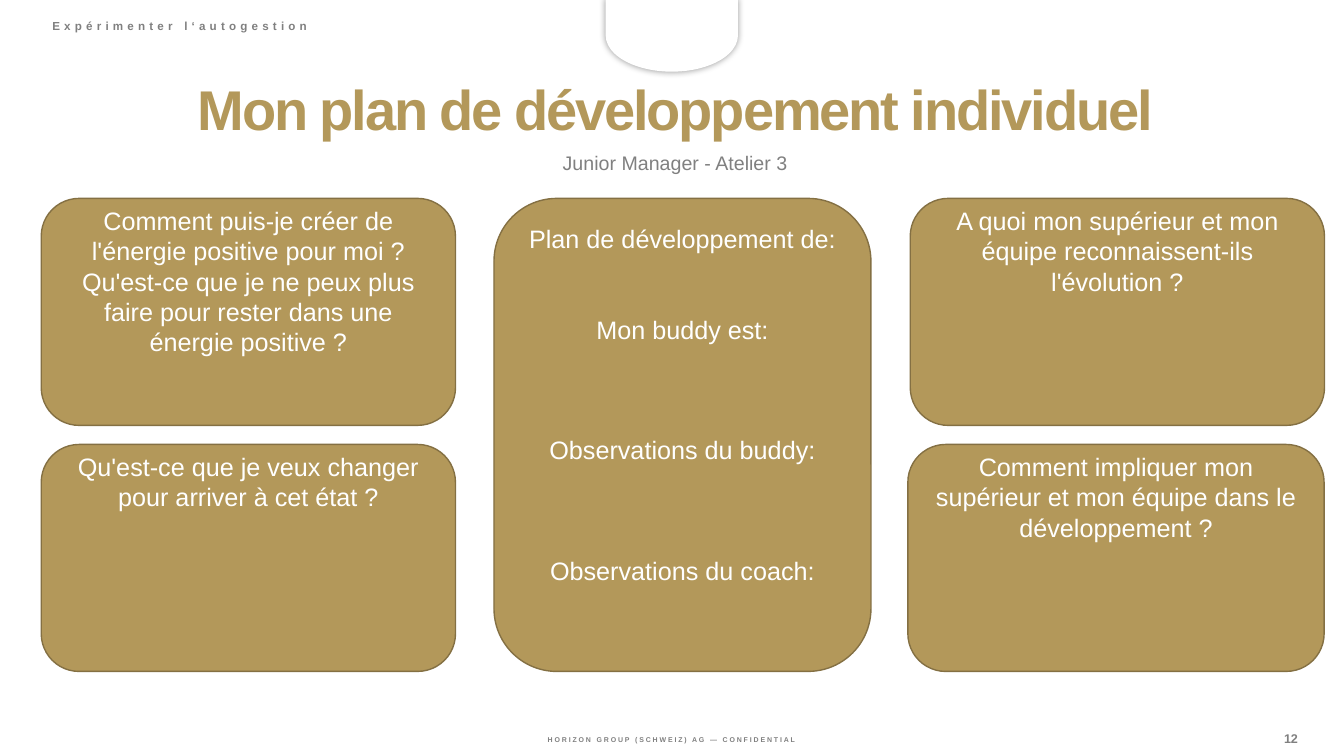
"""Build the individual development plan slide."""
from dataclasses import dataclass

import pptx
import pptx.dml.color
import pptx.enum.shapes
import pptx.enum.text
import pptx.oxml
import pptx.oxml.ns
import pptx.util

Cm = pptx.util.Cm
Pt = pptx.util.Pt
Align = pptx.enum.text.PP_ALIGN
Anchor = pptx.enum.text.MSO_ANCHOR
Preset = pptx.enum.shapes.MSO_SHAPE

COLOURS = {"gold": "B3985A", "edge": "847043", "grey": "808080", "white": "FFFFFF"}
CARD_LINE = 21.6
ROW_TOPS = (5.0, 11.2)
CARD_HEIGHT = 5.72


@dataclass(frozen=True)
class Area:
    left: float
    top: float
    width: float
    height: float


@dataclass(frozen=True)
class Style:
    size: float
    colour: str
    bold: bool = False
    tracking: float = 0
    align: Align = Align.CENTER
    spacing: float | None = None


@dataclass(frozen=True)
class Entry:
    text: str
    lines_before: int = 0


@dataclass(frozen=True)
class Card:
    area: Area
    entries: tuple[Entry, ...]
    inset_top: float = -0.1


@dataclass(frozen=True)
class Label:
    text: str
    area: Area
    style: Style


CARD_STYLE = Style(18, "white", spacing=Pt(CARD_LINE))

TITLE = Label("Mon plan de développement individuel", Area(1.04, 1.93, 31.95, 1.8),
              Style(40, "gold", True, -1.5, spacing=0.9))
SUBTITLE = Label("Junior Manager - Atelier 3", Area(1.04, 3.78, 31.95, 0.79),
                 Style(14, "grey", spacing=0.8))
HEADER = Label("Expérimenter l‘autogestion", Area(1.07, 0.41, 12.37, 0.53),
               Style(8.3, "grey", True, 3, Align.LEFT, 0.8))
FOOTERS = (
    Label("HORIZON GROUP (SCHWEIZ) AG — CONFIDENTIAL", Area(10.49, 18.5, 12.88, 0.25),
          Style(5, "grey", True, 1.3)),
    Label("12", Area(31.57, 18.4, 1.93, 0.41), Style(9, "grey", True, -0.1)),
)

CARDS = (
    Card(Area(1.04, ROW_TOPS[0], 10.44, CARD_HEIGHT), (Entry(
        "Comment puis-je créer de l'énergie positive pour moi ? "
        "Qu'est-ce que je ne peux plus faire pour rester dans une énergie positive ?"),)),
    Card(Area(1.04, ROW_TOPS[1], 10.44, CARD_HEIGHT), (Entry(
        "Qu'est-ce que je veux changer pour arriver à cet état ?"),)),
    Card(Area(22.94, ROW_TOPS[0], 10.44, CARD_HEIGHT), (Entry(
        "A quoi mon supérieur et mon équipe reconnaissent-ils l'évolution ?"),)),
    Card(Area(22.88, ROW_TOPS[1], 10.49, CARD_HEIGHT), (Entry(
        "Comment impliquer mon supérieur et mon équipe dans le développement ?"),)),
    Card(Area(12.45, ROW_TOPS[0], 9.5, ROW_TOPS[1] + CARD_HEIGHT - ROW_TOPS[0]), (
        Entry("Plan de développement de:"),
        Entry("Mon buddy est:", 2),
        Entry("Observations du buddy:", 3),
        Entry("Observations du coach:", 3)), 0.16),
)


def colour(name: str) -> pptx.dml.color.RGBColor:
    """Return a named colour."""
    return pptx.dml.color.RGBColor.from_string(COLOURS[name])


def lengths(area: Area) -> tuple[int, int, int, int]:
    """Convert an area to slide lengths."""
    return Cm(area.left), Cm(area.top), Cm(area.width), Cm(area.height)


def write(para, text: str, style: Style) -> None:
    """Fill a paragraph with one styled run."""
    para.alignment = style.align
    if style.spacing is not None:
        para.line_spacing = style.spacing
    span = para.add_run()
    span.text = text
    span.font.name = "Arial"
    span.font.size = Pt(style.size)
    span.font.bold = style.bold
    span.font.color.rgb = colour(style.colour)
    if style.tracking:
        span._r.get_or_add_rPr().set("spc", str(round(style.tracking * 100)))


def fill_label(box, label: Label, anchor: Anchor = Anchor.TOP) -> None:
    """Place a box and write its label."""
    box.left, box.top, box.width, box.height = lengths(label.area)
    frame = box.text_frame
    frame.word_wrap = True
    frame.auto_size = pptx.enum.text.MSO_AUTO_SIZE.NONE
    frame.vertical_anchor = anchor
    para = frame.paragraphs[0]
    para.space_before = Pt(0)
    write(para, label.text, label.style)


def add_footer(page, label: Label) -> None:
    """Add a footer label without margins."""
    box = page.shapes.add_textbox(*lengths(label.area))
    fill_label(box, label)
    frame = box.text_frame
    frame.margin_left = frame.margin_right = frame.margin_bottom = 0
    frame.margin_top = Cm(0.03)


def add_panel(page, preset: Preset, area: Area, fill: str, line: str):
    """Add a filled and outlined shape."""
    panel = page.shapes.add_shape(preset, *lengths(area))
    panel.shadow.inherit = False
    panel.fill.solid()
    panel.fill.fore_color.rgb = colour(fill)
    panel.line.color.rgb = colour(line)
    panel.line.width = Pt(1)
    return panel


def add_tab(page) -> None:
    """Add the white tab with its soft shadow at the top edge."""
    tab = add_panel(page, Preset.FLOWCHART_DELAY, Area(16.03, -0.76, 1.8, 3.3), "white", "white")
    tab.rotation = 90
    effects = tab._element.spPr.find(pptx.oxml.ns.qn("a:effectLst"))
    effects.append(pptx.oxml.parse_xml(
        f'<a:outerShdw {pptx.oxml.ns.nsdecls("a")} blurRad="{Pt(5)}" dist="0" dir="0">'
        '<a:srgbClr val="000000"><a:alpha val="40000"/></a:srgbClr></a:outerShdw>'))


def add_card(page, card: Card) -> None:
    """Add a rounded card with its questions."""
    panel = add_panel(page, Preset.ROUNDED_RECTANGLE, card.area, "gold", "edge")
    frame = panel.text_frame
    frame.word_wrap = True
    frame.vertical_anchor = Anchor.TOP
    frame.margin_top = Cm(card.inset_top)
    for index, entry in enumerate(card.entries):
        para = frame.add_paragraph() if index else frame.paragraphs[0]
        para.space_before = Pt(entry.lines_before * CARD_LINE)
        write(para, entry.text, CARD_STYLE)


def main() -> None:
    """Create and save the deck."""
    deck = pptx.Presentation()
    deck.slide_width, deck.slide_height = Cm(33.87), Cm(19.05)
    page = deck.slides.add_slide(deck.slide_layouts[0])
    add_tab(page)
    for label in FOOTERS:
        add_footer(page, label)
    fill_label(page.placeholders[1], SUBTITLE)
    fill_label(page.shapes.title, TITLE, Anchor.MIDDLE)
    fill_label(page.shapes.add_textbox(*lengths(HEADER.area)), HEADER)
    for card in CARDS:
        add_card(page, card)
    deck.save("out.pptx")


if __name__ == "__main__":
    main()
